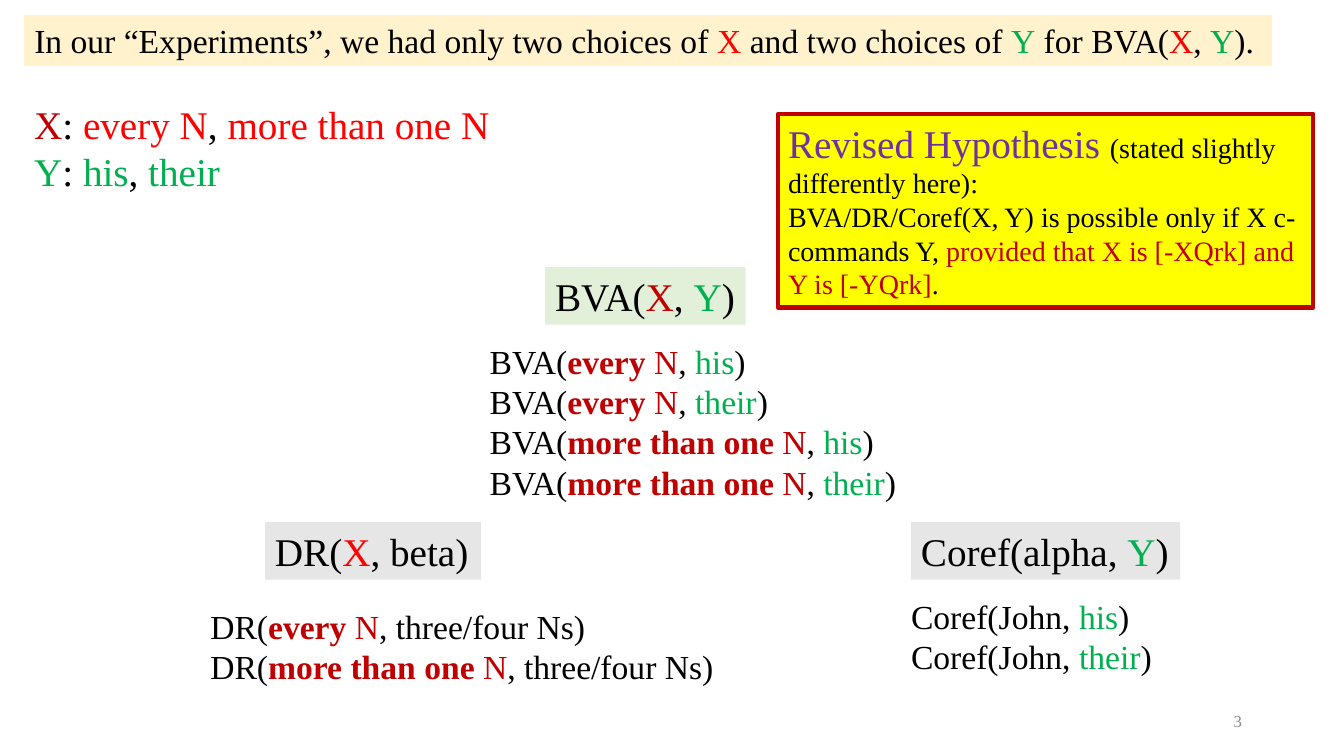
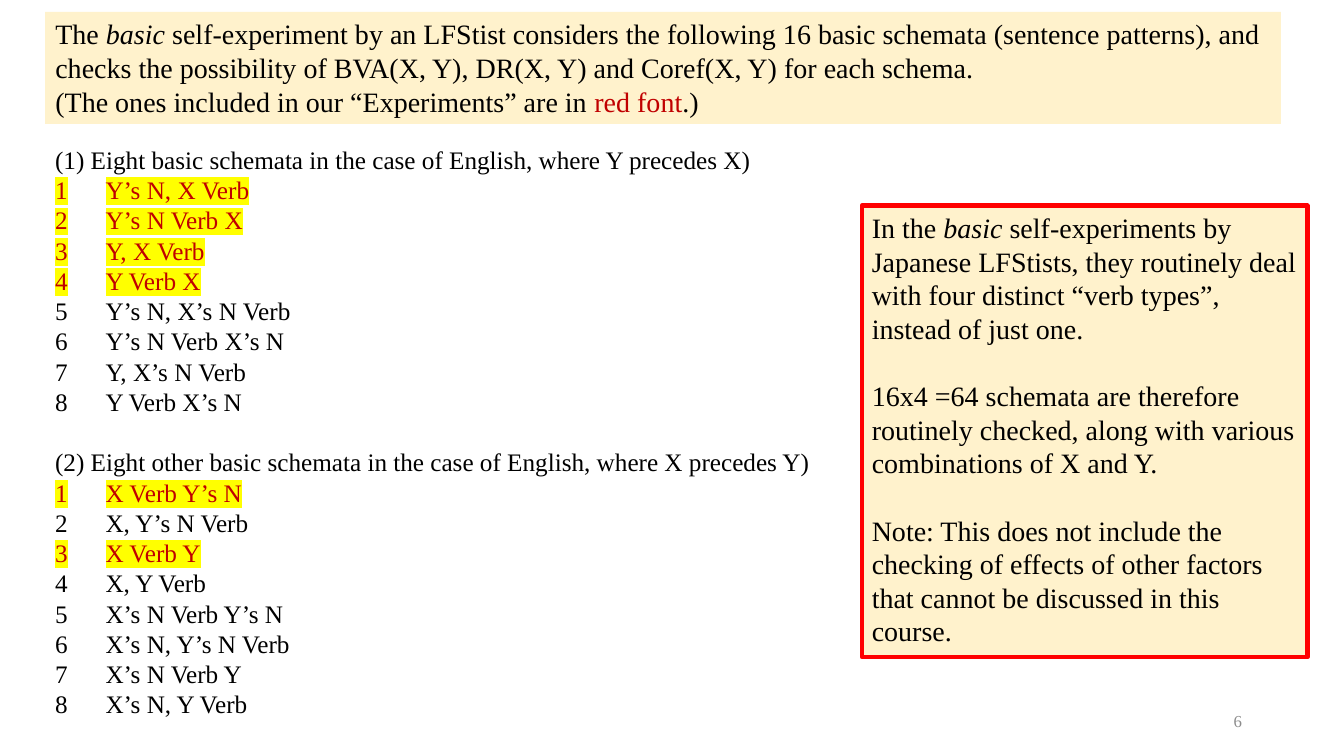
from dataclasses import dataclass
from itertools import product
from typing import NamedTuple

from lxml.etree import SubElement
from pptx import Presentation
from pptx.dml.color import RGBColor as Rgb
from pptx.enum.shapes import MSO_SHAPE as Kind
from pptx.enum.text import MSO_ANCHOR as Anchor, MSO_AUTO_SIZE as Fit, PP_ALIGN as Align
from pptx.oxml.ns import qn
from pptx.util import Cm, Pt


@dataclass(frozen=True)
class Theme:
    font: str = "Times New Roman"
    ink: str = "000000"
    red: str = "FF0000"
    dark: str = "C00000"
    green: str = "00B050"
    plum: str = "7030A0"
    faint: str = "8C8C8C"
    cream: str = "FFF2CC"
    mint: str = "E2F0D9"
    grey: str = "E7E6E6"
    gold: str = "FFFF00"
    head: int = 28
    body: int = 24
    note: int = 20
    list: int = 18
    tiny: int = 12
    edge: int = 3


T = Theme()


class Box(NamedTuple):
    x: float
    y: float
    w: float
    h: float

    def inner(self, dx, dy, w, h):
        return Box(self.x + dx, self.y + dy, w, h)

    def cm(self):
        return [Cm(v) for v in self]


class Run(NamedTuple):
    text: str
    color: str = T.ink
    bold: bool = False
    ital: bool = False
    size: int = 0
    mark: str = ""


class Line(NamedTuple):
    runs: list
    gap: float = 0


PAGE = Box(0, 0, 33.87, 19.05)


# Text and shapes
def add_run(para, run, size):
    r = para.add_run()
    r.text = run.text
    font = r.font
    font.size = Pt(run.size or size)
    font.bold, font.italic = run.bold, run.ital
    font.color.rgb = Rgb.from_string(run.color)
    if run.mark:
        tint = SubElement(r._r.get_or_add_rPr(), qn("a:highlight"))
        SubElement(tint, qn("a:srgbClr")).set("val", run.mark)
    font.name = T.font


def write(frame, lines, size, wrap=True, align=Align.LEFT, anchor=Anchor.TOP):
    frame.word_wrap = wrap
    frame.auto_size = Fit.NONE if wrap else Fit.SHAPE_TO_FIT_TEXT
    frame.vertical_anchor = anchor
    for i, line in enumerate(lines):
        para = frame.add_paragraph() if i else frame.paragraphs[0]
        para.alignment, para.line_spacing = align, 1.0
        para.space_before, para.space_after = Pt(line.gap), Pt(0)
        for run in line.runs:
            add_run(para, run, size)


def paint(shape, color):
    shape.fill.solid()
    shape.fill.fore_color.rgb = Rgb.from_string(color)


def label(slide, box, lines, size, **opts):
    shape = slide.shapes.add_textbox(*box.cm())
    write(shape.text_frame, lines, size, **opts)


def panel(slide, box, lines, size, fill, edge="", **opts):
    shape = slide.shapes.add_shape(Kind.RECTANGLE, *box.cm())
    shape.shadow.inherit = False
    paint(shape, fill)
    if edge:
        shape.line.color.rgb = Rgb.from_string(edge)
        shape.line.width = Pt(T.edge)
    else:
        shape.line.fill.background()
    write(shape.text_frame, lines, size, **opts)


# Shared frame: title band and page number
def start(deck, box, lines, size, number):
    slide = deck.slides.add_slide(deck.slide_layouts[5])
    band = slide.shapes.title
    band.left, band.top, band.width, band.height = box.cm()
    paint(band, T.cream)
    write(band.text_frame, lines, size)
    label(slide, PAGE.inner(23.93, 17.65, 7.62, 1.02),
          [Line([Run(number, T.faint)])], T.tiny,
          align=Align.RIGHT, anchor=Anchor.MIDDLE)
    return slide


# Heading tag with its examples below
def branch(slide, box, tag, fill, shift, rows):
    panel(slide, box, [Line(tag)], T.head, fill, wrap=False)
    dx, dy, w, h = shift
    label(slide, box.inner(dx, dy, w, h), [Line(r) for r in rows], T.body, wrap=False)


def choices(deck, page):
    every, more = "every", "more than one"
    nouns, prons = (every, more), ("his", "their")
    comma, close = Run(", "), Run(")")
    x, y, deep = Run("X", T.red), Run("Y", T.green), Run("X", T.dark)

    def noun(word):
        return [Run(word, T.dark, bold=True), Run(" N", T.dark)]

    def pron(word):
        return Run(word, T.green)

    slide = start(deck, page.inner(0.61, 0.38, 31.45, 1.28), [Line([
        Run("In our “Experiments”, we had only two choices of "), x,
        Run(" and two choices of "), y, Run(" for BVA("), x, comma, y, Run(").")])],
        T.body, "3")

    # Values of X and Y
    label(slide, page.inner(0.61, 2.41, 12.12, 2.64), [
        Line([deep, Run(": "), Run(every + " N", T.red), comma, Run(more + " N", T.red)]),
        Line([y, Run(": "), pron("his"), comma, pron("their")])], T.head, wrap=False)

    # Hypothesis
    panel(slide, page.inner(19.61, 2.87, 13.49, 4.88), [
        Line([Run("Revised Hypothesis ", T.plum, size=T.head),
              Run("(stated slightly differently here):")]),
        Line([Run("BVA/DR/Coref(X, Y) is possible only if X c-commands Y, "),
              Run("provided that X is [-XQrk] and Y is [-YQrk]", T.dark), Run(".")])],
        T.note, T.gold, T.dark)

    # Three relations
    branch(slide, page.inner(13.74, 6.73, 5.05, 1.45),
           [Run("BVA("), deep, comma, y, close], T.mint, (-1.65, 1.73, 10.87, 4.37),
           [[Run("BVA("), *noun(n), comma, pron(p), close]
            for n, p in product(nouns, prons)])
    branch(slide, page.inner(6.68, 13.16, 5.44, 1.45),
           [Run("DR("), x, Run(", beta)")], T.grey, (-1.63, 1.98, 13.31, 2.31),
           [[Run("DR("), *noun(n), Run(", three/four Ns)")] for n in nouns])
    branch(slide, page.inner(22.96, 13.16, 6.78, 1.45),
           [Run("Coref(alpha, "), y, close], T.grey, (-0.25, 1.72, 6.63, 2.31),
           [[Run("Coref(John, "), pron(p), close] for p in prons])


# Numbered patterns, the tested ones marked
def listing(slide, box, groups):
    lines = []
    for title, rows, used in groups:
        lines.append(Line([Run(title)], 1.2 * T.list if lines else 0))
        for i, row in enumerate(rows, 1):
            look = {"color": T.dark, "mark": T.gold} if i in used else {}
            lines.append(Line([Run(f"{i}\t{row}", **look)]))
    label(slide, box, lines, T.list)


def schemata(deck, page):
    basic = Run("basic", ital=True)
    slide = start(deck, page.inner(1.14, 0.3, 31.14, 2.82), [
        Line([Run("The "), basic,
              Run(" self-experiment by an LFStist considers the following 16 basic "
                  "schemata (sentence patterns), and checks the possibility of "
                  "BVA(X, Y), DR(X, Y) and Coref(X, Y) for each schema.")]),
        Line([Run("(The ones included in our “Experiments” are in "),
              Run("red font", T.dark), Run(".)")])], T.note, "6")

    listing(slide, page.inner(1.14, 3.51, 19.63, 14.88), [
        ("(1) Eight basic schemata in the case of English, where Y precedes X)",
         ["Y’s N, X Verb", "Y’s N Verb X", "Y, X Verb", "Y Verb X",
          "Y’s N, X’s N Verb", "Y’s N Verb X’s N", "Y, X’s N Verb", "Y Verb X’s N"],
         {1, 2, 3, 4}),
        ("(2) Eight other basic schemata in the case of English, where X precedes Y)",
         ["X Verb Y’s N", "X, Y’s N Verb", "X Verb Y", "X, Y Verb",
          "X’s N Verb Y’s N", "X’s N, Y’s N Verb", "X’s N Verb Y", "X’s N, Y Verb"],
         {1, 3})])

    # Side note
    gap = 1.2 * T.note
    panel(slide, page.inner(21.72, 5.18, 11.23, 11.38), [
        Line([Run("In the "), basic,
              Run(" self-experiments by Japanese LFStists, they routinely deal with "
                  "four distinct “verb types”, instead of just one.")]),
        Line([Run("16x4 =64 schemata are therefore routinely checked, along with "
                  "various combinations of X and Y.")], gap),
        Line([Run("Note: This does not include the checking of effects of other "
                  "factors that cannot be discussed in this course.")], gap)],
        T.note, T.cream, T.red)


def main():
    deck = Presentation()
    deck.slide_width, deck.slide_height = Cm(PAGE.w), Cm(PAGE.h)
    choices(deck, PAGE)
    schemata(deck, PAGE)
    deck.save("out.pptx")


if __name__ == "__main__":
    main()
